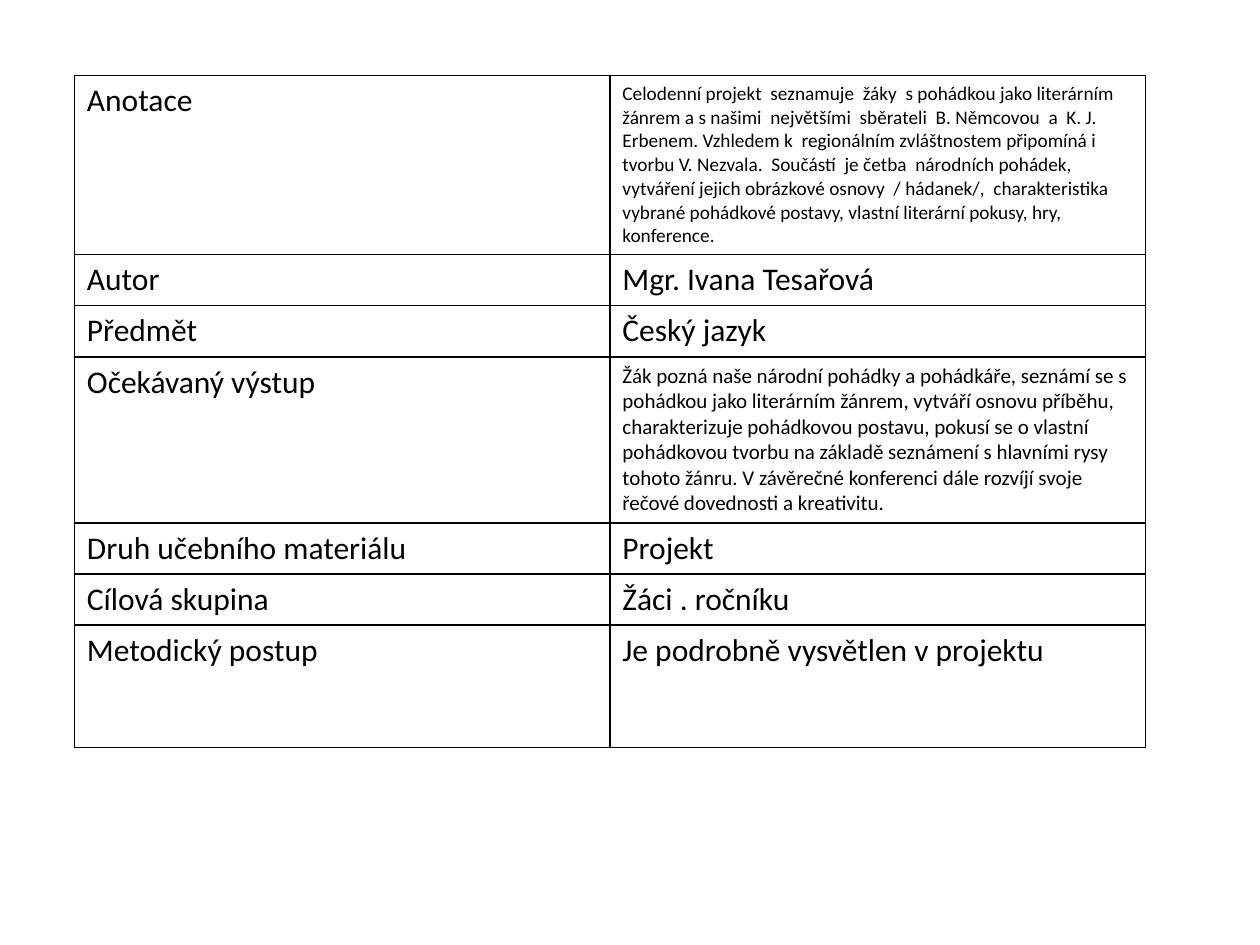
from lxml.etree import SubElement
from pptx import Presentation
from pptx.dml.color import RGBColor
from pptx.oxml.ns import qn
from pptx.util import Pt

BLACK = RGBColor(0, 0, 0)
WHITE = RGBColor(255, 255, 255)
FONT = "Calibri"
SIDES = ("a:lnL", "a:lnR", "a:lnT", "a:lnB")
LINE = 29.2

# label, text, text size, row height
ROWS = [
    ("Anotace",
     "Celodenní projekt  seznamuje  žáky  s pohádkou jako literárním žánrem "
     "a s našimi  největšími  sběrateli  B. Němcovou  a  K. J. Erbenem. "
     "Vzhledem k  regionálním zvláštnostem připomíná i tvorbu V. Nezvala.  "
     "Součástí  je četba  národních pohádek,  vytváření jejich obrázkové "
     "osnovy  / hádanek/,  charakteristika  vybrané pohádkové postavy, "
     "vlastní literární pokusy, hry, konference.", 11, 97.2),
    ("Autor", "Mgr. Ivana Tesařová", 18, LINE),
    ("Předmět", "Český jazyk", 18, LINE),
    ("Očekávaný výstup",
     "Žák pozná naše národní pohádky a pohádkáře, seznámí se s pohádkou "
     "jako literárním žánrem, vytváří osnovu příběhu, charakterizuje "
     "pohádkovou postavu, pokusí se o vlastní pohádkovou tvorbu na základě "
     "seznámení s hlavními rysy tohoto žánru. V závěrečné konferenci dále "
     "rozvíjí svoje řečové dovednosti a kreativitu.", 12, LINE),
    ("Druh učebního materiálu", "Projekt", 18, LINE),
    ("Cílová skupina", "Žáci . ročníku", 18, LINE),
    ("Metodický postup", "Je podrobně vysvětlen v projektu", 18, 69.8),
]


def frame(cell):
    """Draw a thin black line on each side of the cell."""
    props = cell._tc.get_or_add_tcPr()
    for side in SIDES:
        line = SubElement(props, qn(side), w=str(Pt(1)))
        fill = SubElement(line, qn("a:solidFill"))
        SubElement(fill, qn("a:srgbClr"), val=str(BLACK))


deck = Presentation()
deck.slide_width, deck.slide_height = Pt(720), Pt(540)
slide = deck.slides.add_slide(deck.slide_layouts[6])

high = sum(row[3] for row in ROWS)
table = slide.shapes.add_table(
    len(ROWS), 2, Pt(42.5), Pt(43.2), Pt(612), Pt(high)).table
table.first_row = False
table.horz_banding = False
for col in table.columns:
    col.width = Pt(306)

for i, (label, text, size, height) in enumerate(ROWS):
    table.rows[i].height = Pt(height)
    for j, (words, points) in enumerate(((label, 18), (text, size))):
        cell = table.cell(i, j)
        frame(cell)
        cell.fill.solid()
        cell.fill.fore_color.rgb = WHITE
        run = cell.text_frame.paragraphs[0].add_run()
        run.text = words
        run.font.name = FONT
        run.font.size = Pt(points)
        run.font.color.rgb = BLACK

deck.save("out.pptx")
